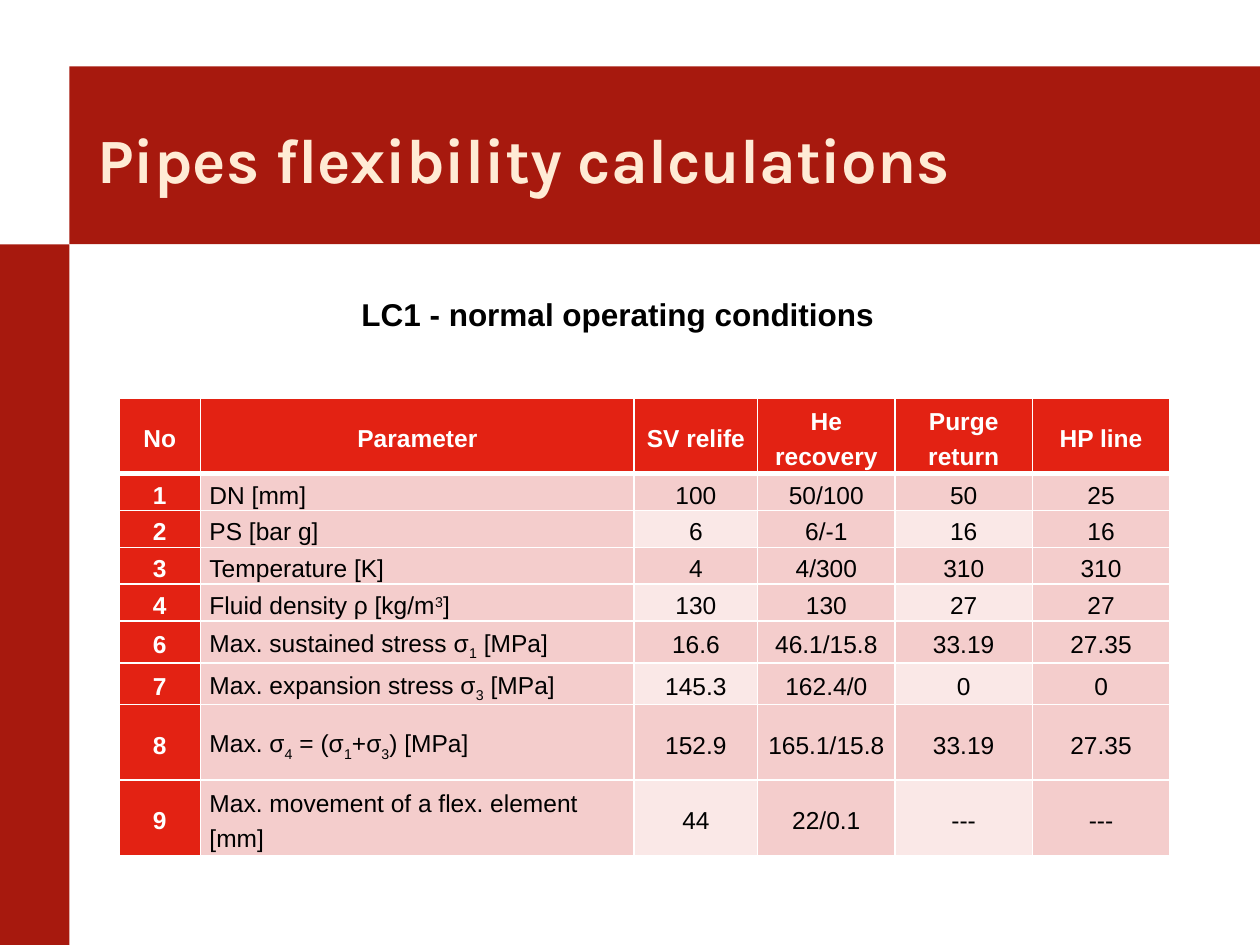
"""Builds the slide with the pipe flexibility results table."""
from lxml import etree
from pptx import Presentation
from pptx import util as u
from pptx.dml.color import RGBColor
from pptx.enum import shapes, text
from pptx.oxml import ns

Pt = u.Pt
COLORS = {
    "bar": "A7190E", "title": "FFEBD5", "header": "E32213", "band": "F4CDCC",
    "light": "FAE8E7", "white": "FFFFFF", "black": "000000",
}
BASELINES = {"^": "30000", "_": "-25000"}
COLUMN_WIDTHS = [46.8, 247.7, 70.6, 78.5, 78.5, 78.5]
ROW_HEIGHTS = [43.2] + [20.16] * 6 + [43.2] * 2
ROWS = [
    ["No", "Parameter", "SV relife", "He recovery", "Purge return", "HP line"],
    ["1", "DN [mm]", "100", "50/100", "50", "25"],
    ["2", "PS [bar g]", "6", "6/-1", "16", "16"],
    ["3", "Temperature [K]", "4", "4/300", "310", "310"],
    ["4", "Fluid density ρ [kg/m|^3|]", "130", "130", "27", "27"],
    ["6", "Max. sustained stress σ|_1| [MPa]", "16.6", "46.1/15.8", "33.19", "27.35"],
    ["7", "Max. expansion stress σ|_3| [MPa]", "145.3", "162.4/0", "0", "0"],
    ["8", "Max. σ|_4| = (σ|_1|+σ|_3|) [MPa]", "152.9", "165.1/15.8", "33.19", "27.35"],
    ["9", "Max. movement of a flex. element [mm]", "44", "22/0.1", "---", "---"],
]


def color(name):
    return RGBColor.from_string(COLORS[name])


def style_font(paragraph, name, size, color_name, bold):
    font = paragraph.font
    font.name, font.size, font.bold = name, Pt(size), bold
    font.color.rgb = color(color_name)


def add_bar(slide, left, top, width, height):
    shape = slide.shapes.add_shape(
        shapes.MSO_SHAPE.RECTANGLE, Pt(left), Pt(top), Pt(width), Pt(height))
    shape.shadow.inherit = False
    shape.fill.solid()
    shape.fill.fore_color.rgb = color("bar")
    shape.line.fill.background()


def add_title(slide, title_text):
    title = slide.shapes.title
    slide.shapes._spTree.append(title._element)
    title.left, title.top, title.width, title.height = Pt(48.24), Pt(49.68), Pt(663), Pt(81.4)
    frame = title.text_frame
    frame.text = title_text
    frame.vertical_anchor = text.MSO_ANCHOR.MIDDLE
    paragraph = frame.paragraphs[0]
    paragraph.alignment = text.PP_ALIGN.LEFT
    style_font(paragraph, "Karla", 36, "title", True)


def add_subtitle(slide, subtitle_text):
    box = slide.shapes.add_textbox(Pt(199.44), Pt(164.88), Pt(320.4), Pt(28.8))
    frame = box.text_frame
    frame.word_wrap = False
    frame.auto_size = text.MSO_AUTO_SIZE.SHAPE_TO_FIT_TEXT
    frame.text = subtitle_text
    style_font(frame.paragraphs[0], "Arial", 18, "black", True)


def add_runs(paragraph, marked_text):
    for part in marked_text.split("|"):
        run = paragraph.add_run()
        baseline = BASELINES.get(part[0])
        run.text = part[1:] if baseline else part
        if baseline:
            run._r.get_or_add_rPr().set("baseline", baseline)


def set_borders(cell, bottom_width):
    properties = cell._tc.get_or_add_tcPr()
    widths = {"lnL": 1, "lnR": 1, "lnT": 1, "lnB": bottom_width}
    for position, (tag, width) in enumerate(widths.items()):
        line = etree.Element(ns.qn(f"a:{tag}"), w=str(Pt(width)))
        fill = etree.SubElement(line, ns.qn("a:solidFill"))
        etree.SubElement(fill, ns.qn("a:srgbClr"), val=COLORS["white"])
        properties.insert(position, line)


def fill_name(row, column):
    if row == 0 or column == 0:
        return "header"
    return "light" if row % 2 == 0 and column in (2, 4) else "band"


def format_cell(cell, row, column, marked_text):
    heading = row == 0 or column == 0
    cell.margin_left = cell.margin_right = Pt(5.04)
    cell.margin_top = cell.margin_bottom = 0
    cell.vertical_anchor = text.MSO_ANCHOR.MIDDLE
    cell.fill.solid()
    cell.fill.fore_color.rgb = color(fill_name(row, column))
    set_borders(cell, 3 if row == 0 else 1)
    paragraph = cell.text_frame.paragraphs[0]
    left_aligned = column == 1 and not heading
    paragraph.alignment = text.PP_ALIGN.LEFT if left_aligned else text.PP_ALIGN.CENTER
    paragraph.line_spacing = 1.25
    style_font(paragraph, "Arial", 14, "white" if heading else "black", heading)
    add_runs(paragraph, marked_text)


def add_results_table(slide):
    table = slide.shapes.add_table(
        len(ROWS), len(COLUMN_WIDTHS), Pt(67.9), Pt(227.5),
        Pt(sum(COLUMN_WIDTHS)), Pt(sum(ROW_HEIGHTS))).table
    for column, width in zip(table.columns, COLUMN_WIDTHS):
        column.width = Pt(width)
    for row, height in zip(table.rows, ROW_HEIGHTS):
        row.height = Pt(height)
    for row, values in enumerate(ROWS):
        for column, value in enumerate(values):
            format_cell(table.cell(row, column), row, column, value)


def main():
    presentation = Presentation()
    presentation.slide_width, presentation.slide_height = Pt(720), Pt(540)
    slide = presentation.slides.add_slide(presentation.slide_layouts[5])
    add_bar(slide, 39.6, 38, 680.4, 101.6)
    add_bar(slide, 0, 139.6, 39.6, 400.4)
    add_title(slide, "Pipes flexibility calculations")
    add_subtitle(slide, "LC1 - normal operating conditions")
    add_results_table(slide)
    presentation.save("out.pptx")


if __name__ == "__main__":
    main()
